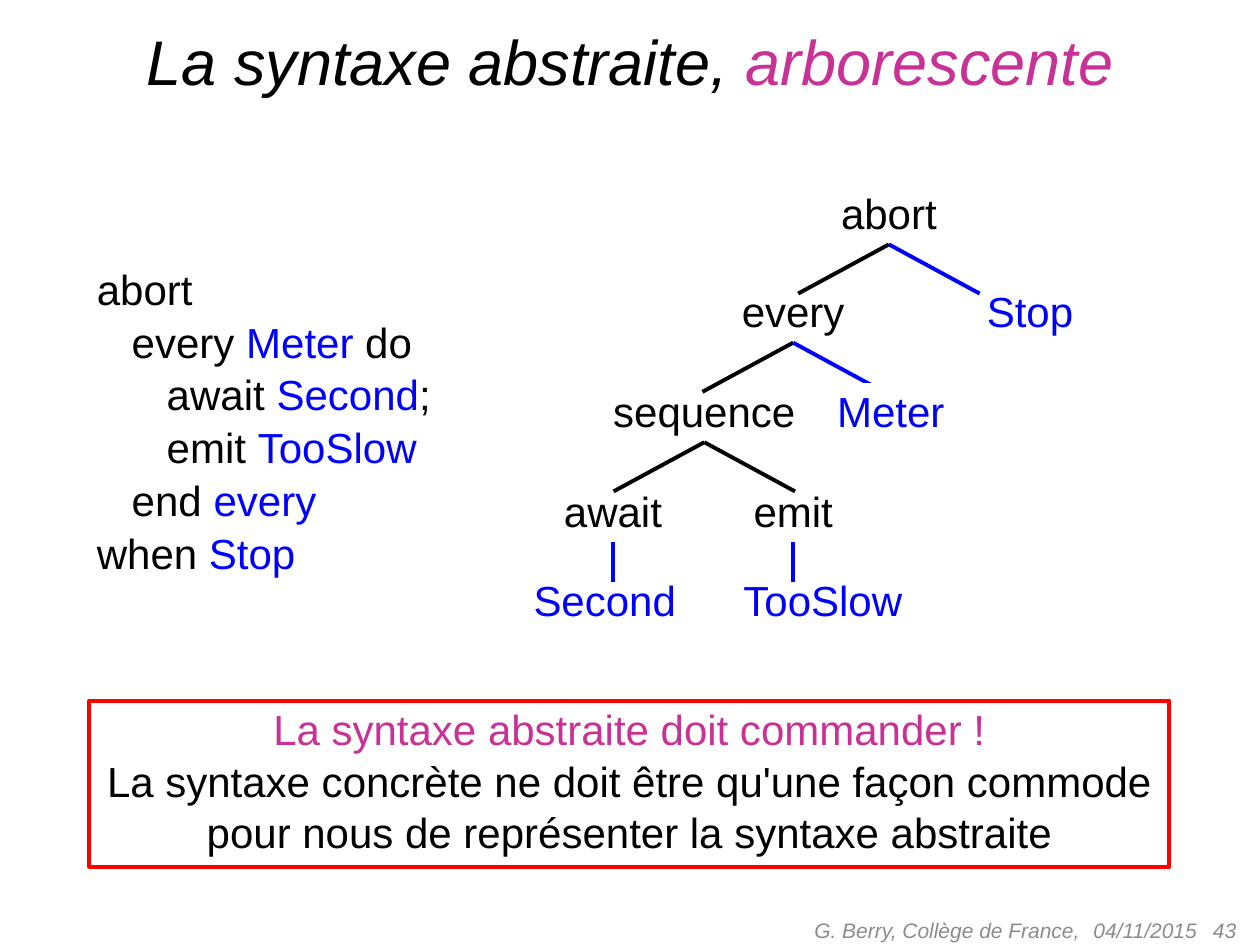
from dataclasses import dataclass
from typing import NamedTuple

import pptx
import pptx.dml.color
import pptx.enum.shapes
import pptx.enum.text
import pptx.oxml.ns
import pptx.util
from lxml import etree

ALIGN = pptx.enum.text.PP_ALIGN
ANCHOR = pptx.enum.text.MSO_ANCHOR

# Grid of 100 columns by 75 rows
SLIDE_WIDTH, SLIDE_HEIGHT = pptx.util.Inches(10), pptx.util.Inches(7.5)
COLUMN, ROW = SLIDE_WIDTH / 100, SLIDE_HEIGHT / 75

BLACK, BLUE, PINK = "000000", "0000FF", "C83296"
GREY, RED, WHITE = "8C8C8C", "FF0000", "FFFFFF"
LINE_WIDTH = pptx.util.Pt(2.25)
NODE_HEIGHT = 4.7
BRANCH_SPREAD, BRANCH_DROP, STEM_DROP = 7.2, 3.9, 3.2


class Area(NamedTuple):
    left: float
    top: float
    width: float
    height: float


class Span(NamedTuple):
    text: str
    color: str = BLACK


@dataclass
class Style:
    size: float = 24
    italic: bool = False
    align: ALIGN = ALIGN.LEFT
    anchor: ANCHOR = ANCHOR.TOP
    spacing: float = 1.05
    wrap: bool = False


@dataclass
class Node:
    name: str
    left: float
    top: float
    width: float
    color: str = BLACK


@dataclass
class Edge:
    parent: str
    shift: float
    drop: float
    color: str


def rgb(color: str) -> pptx.dml.color.RGBColor:
    return pptx.dml.color.RGBColor.from_string(color)


def place(area: Area) -> tuple[int, int, int, int]:
    return (round(area.left * COLUMN), round(area.top * ROW),
            round(area.width * COLUMN), round(area.height * ROW))


def write(box, lines: list[list[Span]], style: Style) -> None:
    frame = box.text_frame
    frame.word_wrap = style.wrap
    frame.vertical_anchor = style.anchor
    for index, spans in enumerate(lines):
        para = frame.add_paragraph() if index else frame.paragraphs[0]
        para.alignment = style.align
        para.line_spacing = style.spacing
        for span in spans:
            run = para.add_run()
            run.text = span.text
            run.font.name = "Arial"
            run.font.size = pptx.util.Pt(style.size)
            run.font.italic = style.italic
            run.font.color.rgb = rgb(span.color)


def add_text(page, area: Area, lines: list[list[Span]], style: Style):
    box = page.shapes.add_textbox(*place(area))
    write(box, lines, style)
    return box


def add_panel(page, area: Area, lines: list[list[Span]], outline: str = ""):
    box = page.shapes.add_shape(
        pptx.enum.shapes.MSO_SHAPE.RECTANGLE, *place(area))
    box.shadow.inherit = False
    box.fill.solid()
    box.fill.fore_color.rgb = rgb(WHITE)
    if outline:
        box.line.color.rgb = rgb(outline)
        box.line.width = LINE_WIDTH
    else:
        box.line.fill.background()
    box.text_frame.margin_top = 0
    write(box, lines, Style(align=ALIGN.CENTER))
    return box


def add_node(page, node: Node):
    area = Area(node.left, node.top, node.width, NODE_HEIGHT)
    return add_panel(page, area, [[Span(node.name, node.color)]])


def add_edge(page, parent, edge: Edge) -> None:
    start_x = parent.left + parent.width // 2
    start_y = parent.top + parent.height
    line = page.shapes.add_connector(
        pptx.enum.shapes.MSO_CONNECTOR.STRAIGHT, start_x, start_y,
        start_x + round(edge.shift * COLUMN), start_y + round(edge.drop * ROW))
    line.begin_connect(parent, 2)
    line.line.color.rgb = rgb(edge.color)
    line.line.width = LINE_WIDTH
    etree.SubElement(line._element.spPr, pptx.oxml.ns.qn("a:effectLst"))


TITLE = [[Span("La syntaxe abstraite, "), Span("arborescente", PINK)]]
PROGRAM = [
    [Span("abort")],
    [Span("   every "), Span("Meter", BLUE), Span(" do")],
    [Span("      await "), Span("Second", BLUE), Span(";")],
    [Span("      emit "), Span("TooSlow", BLUE)],
    [Span("   end "), Span("every", BLUE)],
    [Span("when "), Span("Stop", BLUE)],
]
CONCLUSION = [
    [Span("La syntaxe abstraite doit commander !", PINK)],
    [Span("La syntaxe concrète ne doit être qu'une façon commode")],
    [Span("pour nous de représenter la syntaxe abstraite")],
]
FOOTER = [
    ("G. Berry, Collège de France,", Area(55, 71.8, 31.7, 4), ALIGN.RIGHT),
    ("04/11/2015", Area(85.8, 71.8, 11, 4), ALIGN.LEFT),
    ("43", Area(94.1, 71.8, 5, 4), ALIGN.RIGHT),
]
NODES = [
    Node("abort", 65.7, 14.7, 9.7),
    Node("Stop", 77.3, 22.5, 8.9, BLUE),
    Node("every", 57.8, 22.5, 10.3),
    Node("sequence", 47.6, 30.4, 16.6),
    Node("await", 43.7, 38.3, 9.9),
    Node("emit", 58.7, 38.3, 8.5),
    Node("Second", 41.3, 45.4, 13.4, BLUE),
    Node("TooSlow", 57.9, 45.4, 14.8, BLUE),
]
METER = Node("Meter", 65.4, 30.4, 10.6, BLUE)
EDGES = [
    Edge("abort", -BRANCH_SPREAD, BRANCH_DROP, BLACK),
    Edge("abort", BRANCH_SPREAD, BRANCH_DROP, BLUE),
    Edge("every", -BRANCH_SPREAD, BRANCH_DROP, BLACK),
    Edge("every", BRANCH_SPREAD, BRANCH_DROP, BLUE),
    Edge("sequence", -BRANCH_SPREAD, BRANCH_DROP, BLACK),
    Edge("sequence", BRANCH_SPREAD, BRANCH_DROP, BLACK),
    Edge("await", 0, STEM_DROP, BLUE),
    Edge("emit", 0, STEM_DROP, BLUE),
]


def main() -> None:
    deck = pptx.Presentation()
    deck.slide_width, deck.slide_height = SLIDE_WIDTH, SLIDE_HEIGHT
    page = deck.slides.add_slide(deck.slide_layouts[6])

    # Conclusion, title and footer
    conclusion = add_panel(page, Area(7.1, 55.6, 85.7, 13.2), CONCLUSION, RED)
    conclusion.text_frame.paragraphs[-1].line_spacing = 1.0
    add_text(page, Area(2.5, 1.3, 95, 7.1), TITLE,
             Style(36, True, ALIGN.CENTER, spacing=1.0, wrap=True))
    for text, area, align in FOOTER:
        add_text(page, area, [[Span(text, GREY)]],
                 Style(12, True, align, ANCHOR.MIDDLE, 1.0, True))

    # Concrete syntax
    add_text(page, Area(6.7, 20.2, 28.8, 26.4), PROGRAM, Style())

    # Abstract syntax tree; Meter covers the tip of its branch
    boxes = {node.name: add_node(page, node) for node in NODES}
    for edge in EDGES:
        add_edge(page, boxes[edge.parent], edge)
    add_node(page, METER)

    deck.save("out.pptx")


if __name__ == "__main__":
    main()
